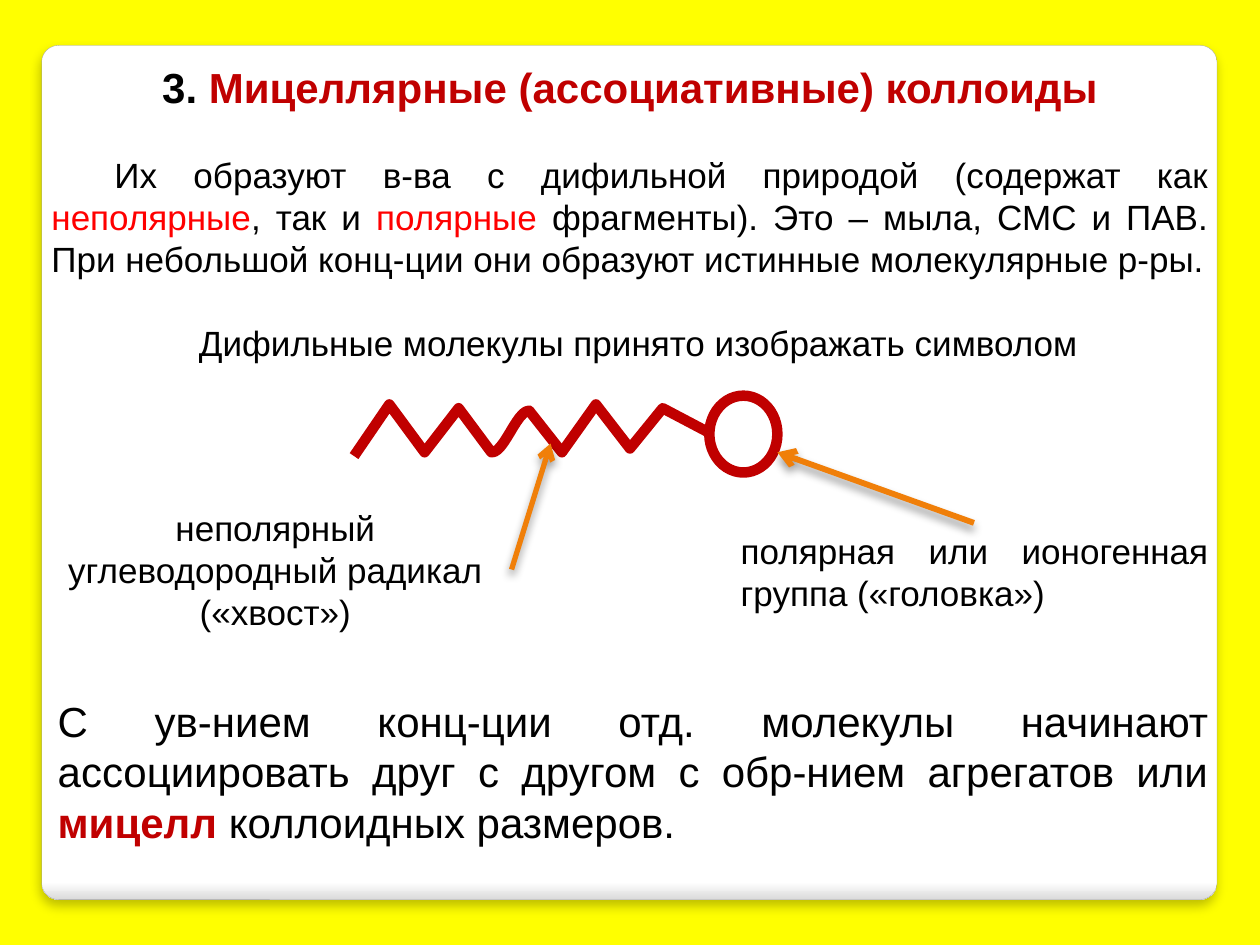
from lxml.etree import SubElement as Sub
from pptx import Presentation
from pptx.dml.color import RGBColor as Rgb
from pptx.enum.shapes import MSO_CONNECTOR as Link, MSO_SHAPE as Shape
from pptx.enum.text import MSO_ANCHOR as Anchor, PP_ALIGN as Align
from pptx.oxml.ns import qn
from pptx.util import Inches, Pt

YELLOW = Rgb(0xFF, 0xFF, 0x00)
WHITE = Rgb(0xFF, 0xFF, 0xFF)
BLACK = Rgb(0, 0, 0)
SILVER = Rgb(0xDA, 0xDA, 0xDA)
GRAY = Rgb(0xA4, 0xA4, 0xA4)
CRIMSON = Rgb(0xC0, 0, 0)
RED = Rgb(0xFF, 0, 0)
ORANGE = Rgb(0xF0, 0x7F, 0x09)
TAIL = [(2.81, 3.62), (3.09, 3.21), (3.37, 3.59), (3.64, 3.24), (3.9, 3.59)]
BEND = [(3.9, 3.59), (4, 3.6), (4.1, 3.26), (4.2, 3.26)]
NECK = [(4.46, 3.59), (4.73, 3.21), (5, 3.56), (5.26, 3.24), (5.62, 3.43)]


def add_shade(item, blur, dist, alpha):
    props = item._element.spPr
    for old in props.findall(qn("a:effectLst")):
        props.remove(old)
    shade = Sub(Sub(props, qn("a:effectLst")), qn("a:outerShdw"),
                blurRad=str(Pt(blur)), dist=str(Pt(dist)),
                dir="5400000", rotWithShape="0")
    tint = Sub(shade, qn("a:srgbClr"), val=str(BLACK))
    Sub(tint, qn("a:alpha"), val=str(alpha * 1000))


def add_panel(slide):
    panel = slide.shapes.add_shape(Shape.ROUNDED_RECTANGLE, Inches(0.33),
                                   Inches(0.36), Inches(9.33), Inches(6.78))
    panel.adjustments[0] = 0.02
    panel.fill.gradient()
    panel.fill.gradient_angle = 270
    for stop, place, color in zip(panel.fill.gradient_stops, (0.98, 1), (WHITE, SILVER)):
        stop.position = place
        stop.color.rgb = color
    panel.line.color.rgb = GRAY
    panel.line.width = Pt(0.16)
    add_shade(panel, 6, 4, 25)


def add_text(slide, box, *paras, size=20, align=Align.JUSTIFY, anchor=Anchor.TOP):
    frame = slide.shapes.add_textbox(*map(Inches, box)).text_frame
    frame.word_wrap = True
    frame.vertical_anchor = anchor
    for index, runs in enumerate(paras):
        para = frame.add_paragraph() if index else frame.paragraphs[0]
        para.alignment = align
        for words, color, bold in runs:
            run = para.add_run()
            run.text = words
            font = run.font
            font.name, font.size, font.bold = "Arial", Pt(size), bold
            font.color.rgb = color
    return frame


def plain(words, color=BLACK):
    return words, color, False


def strong(words, color=CRIMSON):
    return words, color, True


def curve(points, steps=12):
    for step in range(1, steps + 1):
        t = step / steps
        parts = ((1 - t) ** 3, 3 * t * (1 - t) ** 2, 3 * t * t * (1 - t), t ** 3)
        yield tuple(sum(w * p[axis] for w, p in zip(parts, points)) for axis in (0, 1))


def add_symbol(slide):
    group = slide.shapes.add_group_shape().shapes
    points = [tuple(map(Inches, p)) for p in [*TAIL, *curve(BEND), *NECK]]
    pen = group.build_freeform(*points[0])
    pen.add_line_segments(points[1:], close=False)
    head = group.add_shape(Shape.OVAL, Inches(5.63), Inches(3.14),
                           Inches(0.54), Inches(0.61))
    for item in (pen.convert_to_shape(), head):
        item.shadow.inherit = False
        item.fill.solid()
        item.fill.fore_color.rgb = WHITE
        item.line.color.rgb = CRIMSON
        item.line.width = Pt(6)


def add_arrow(slide, start, end, width):
    arrow = slide.shapes.add_connector(Link.STRAIGHT, *map(Inches, start + end))
    arrow.line.color.rgb = ORANGE
    arrow.line.width = Pt(width)
    Sub(arrow.line._get_or_add_ln(), qn("a:tailEnd"), type="arrow")
    add_shade(arrow, 5.2, 3, 40)


def main():
    deck = Presentation()
    deck.slide_width, deck.slide_height = Inches(10), Inches(7.5)
    slide = deck.slides.add_slide(deck.slide_layouts[6])
    slide.background.fill.solid()
    slide.background.fill.fore_color.rgb = YELLOW
    add_panel(slide)

    intro = add_text(
        slide, (0.31, 0.43, 9.38, 1.85),
        [strong("3. ", BLACK), strong("Мицеллярные (ассоциативные) коллоиды")],
        [plain("Их образуют в-ва с дифильной природой (содержат как "),
         plain("неполярные", RED), plain(", так и "), plain("полярные", RED),
         plain(" фрагменты). Это – мыла, СМС и ПАВ. При небольшой конц-ции "
               "они образуют истинные молекулярные р-ры.")],
        anchor=Anchor.MIDDLE)
    title, body = intro.paragraphs
    title.alignment = Align.CENTER
    for run in title.runs:
        run.font.size = Pt(24)
    body.space_before = Pt(24)
    body._p.get_or_add_pPr().set("indent", str(Inches(0.5)))

    add_text(slide, (5.78, 4.15, 3.91, 0.77),
             [plain("полярная или ионогенная группа («головка»)")],
             anchor=Anchor.MIDDLE)
    add_symbol(slide)
    add_text(slide, (1.48, 2.5, 7.34, 0.44),
             [plain("Дифильные молекулы принято изображать символом")],
             align=Align.LEFT)
    add_text(slide, (0.31, 3.97, 3.75, 1.11),
             [plain("неполярный углеводородный радикал («хвост»)")],
             align=Align.CENTER)
    add_arrow(slide, (7.73, 4.15), (6.17, 3.59), 3.35)
    add_arrow(slide, (4.06, 4.52), (4.37, 3.52), 3)
    add_text(slide, (0.36, 5.47, 9.33, 1.31),
             [plain("С ув-нием конц-ции отд. молекулы начинают ассоциировать "
                    "друг с другом с обр-нием агрегатов или "),
              strong("мицелл"), plain(" коллоидных размеров.")], size=24)
    deck.save("out.pptx")


if __name__ == "__main__":
    main()
